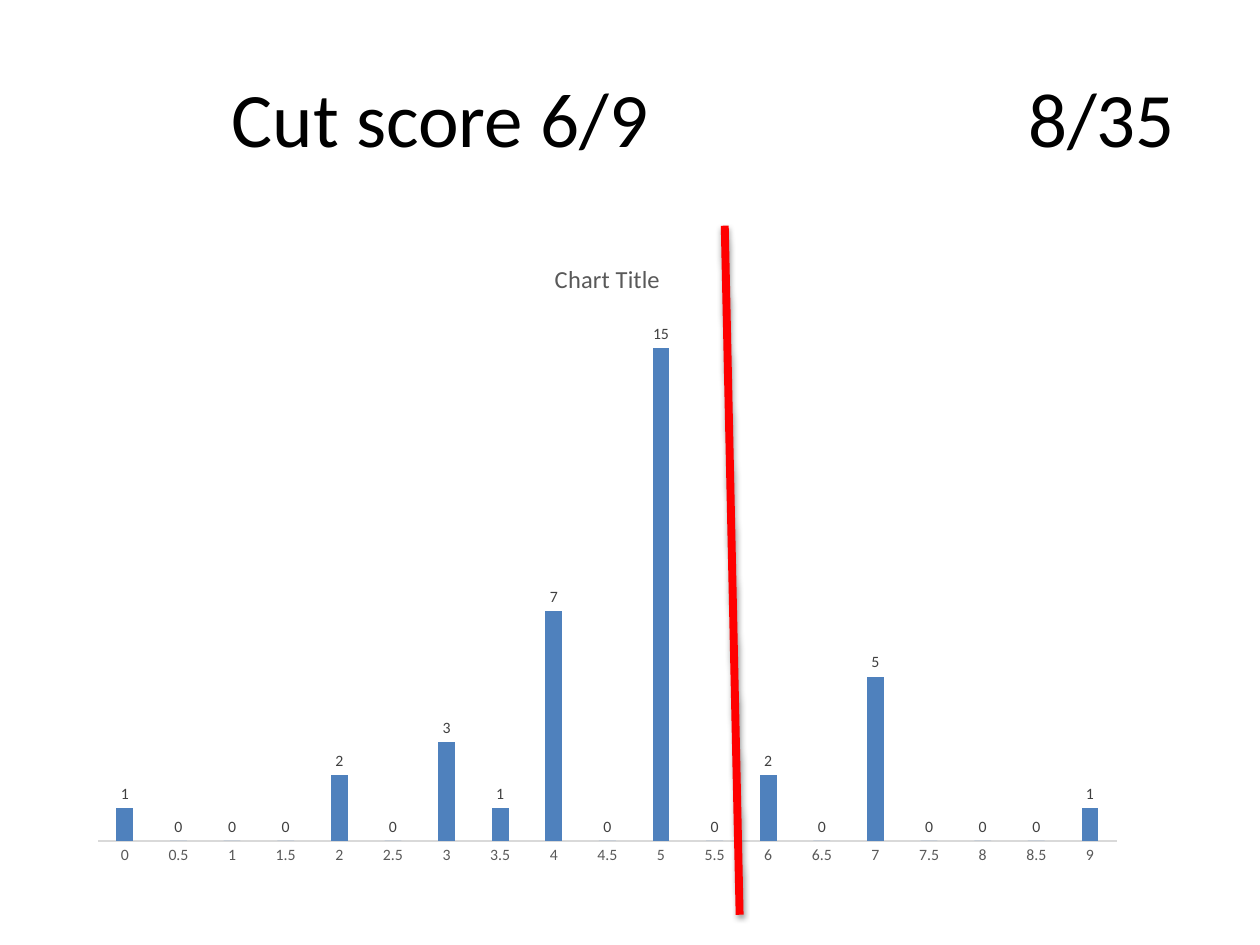
from dataclasses import dataclass

from lxml import etree
from pptx import Presentation, util as u
from pptx.chart.data import CategoryChartData
from pptx.dml.color import RGBColor
from pptx.enum import chart as charts, shapes, text
from pptx.oxml.ns import qn


@dataclass(frozen=True)
class Theme:
    font: str = "Calibri"
    title_color: str = "000000"
    bar_color: str = "4F81BD"
    label_color: str = "404040"
    axis_text_color: str = "595959"
    axis_line_color: str = "D9D9D9"
    cut_color: str = "FF0000"
    title_size: float = 44
    chart_title_size: float = 14
    label_size: float = 9


@dataclass(frozen=True)
class Box:
    left: float
    top: float
    width: float
    height: float

    def lengths(self) -> tuple:
        return tuple(u.Cm(n) for n in (self.left, self.top, self.width, self.height))


THEME = Theme()
TITLE_BOX = Box(1.27, 0.76, 22.86, 3.18)
CHART_BOX = Box(1.55, 4.8, 21.39, 12.88)
CUT_START, CUT_END = (14.61, 4.55), (14.91, 18.44)
COUNTS = [1, 0, 0, 0, 2, 0, 3, 1, 7, 0, 15, 0, 2, 0, 5, 0, 0, 0, 1]
SCORES = [f"{step / 2:g}" for step in range(len(COUNTS))]


def format_font(font, size: float, color: str) -> None:
    font.name = THEME.font
    font.size = u.Pt(size)
    font.bold = False
    font.color.rgb = RGBColor.from_string(color)


def add_text(slide, content: str, box: Box, *, size: float, color: str,
             indent: float, tab: float) -> None:
    """Add one line of text whose parts start at the indent and at the tab stop."""
    frame = slide.shapes.add_textbox(*box.lengths()).text_frame
    frame.word_wrap = True
    frame.vertical_anchor = text.MSO_ANCHOR.MIDDLE
    paragraph = frame.paragraphs[0]
    run = paragraph.add_run()
    run.text = content
    format_font(run.font, size, color)
    properties = paragraph._p.get_or_add_pPr()
    properties.set("marL", str(u.Cm(indent)))
    tabs = etree.SubElement(properties, qn("a:tabLst"))
    etree.SubElement(tabs, qn("a:tab"), pos=str(u.Cm(tab)), algn="l")


def add_score_chart(slide, box: Box) -> None:
    data = CategoryChartData()
    data.categories = SCORES
    data.add_series("Series 1", COUNTS)
    chart = slide.shapes.add_chart(
        charts.XL_CHART_TYPE.COLUMN_CLUSTERED, *box.lengths(), data).chart
    chart.has_legend = False
    format_font(chart.font, 10, THEME.title_color)

    # Chart title
    chart.has_title = True
    title = chart.chart_title.text_frame
    title.text = "Chart Title"
    format_font(title.paragraphs[0].runs[0].font, THEME.chart_title_size,
                THEME.axis_text_color)
    chart.chart_title.include_in_layout = False

    # Axes
    chart.value_axis.visible = False
    chart.value_axis.has_major_gridlines = False
    chart.value_axis.minimum_scale = 0
    chart.value_axis.maximum_scale = 16
    axis = chart.category_axis
    axis.major_tick_mark = charts.XL_TICK_MARK.NONE
    axis.format.line.color.rgb = RGBColor.from_string(THEME.axis_line_color)
    axis.format.line.width = u.Pt(0.75)
    format_font(axis.tick_labels.font, THEME.label_size, THEME.axis_text_color)

    # Bars and their values
    plot = chart.plots[0]
    plot.gap_width = 219
    plot.overlap = -27
    plot.vary_by_categories = False
    series = plot.series[0]
    series.format.fill.solid()
    series.format.fill.fore_color.rgb = RGBColor.from_string(THEME.bar_color)
    labels = series.data_labels
    labels.show_value = True
    labels.position = charts.XL_LABEL_POSITION.OUTSIDE_END
    format_font(labels.font, THEME.label_size, THEME.label_color)


def add_cut_line(slide, start: tuple[float, float], end: tuple[float, float]) -> None:
    line = slide.shapes.add_connector(
        shapes.MSO_CONNECTOR.STRAIGHT, *(u.Cm(n) for n in start + end))
    line.line.color.rgb = RGBColor.from_string(THEME.cut_color)
    line.line.width = u.Pt(4.5)
    # Soft shadow straight below
    effects = etree.SubElement(line._element.spPr, qn("a:effectLst"))
    shadow = etree.SubElement(
        effects, qn("a:outerShdw"), blurRad=str(u.Pt(3.1)), dist=str(u.Pt(1.6)),
        dir="5400000", rotWithShape="0")
    color = etree.SubElement(shadow, qn("a:srgbClr"), val="000000")
    etree.SubElement(color, qn("a:alpha"), val="38000")


def main() -> None:
    presentation = Presentation()
    presentation.slide_width, presentation.slide_height = u.Cm(25.4), u.Cm(19.05)
    slide = presentation.slides.add_slide(presentation.slide_layouts[6])
    add_text(slide, "Cut score 6/9\t8/35", TITLE_BOX, size=THEME.title_size,
             color=THEME.title_color, indent=3.15, tab=16.1)
    add_score_chart(slide, CHART_BOX)
    add_cut_line(slide, CUT_START, CUT_END)
    presentation.save("out.pptx")


if __name__ == "__main__":
    main()
